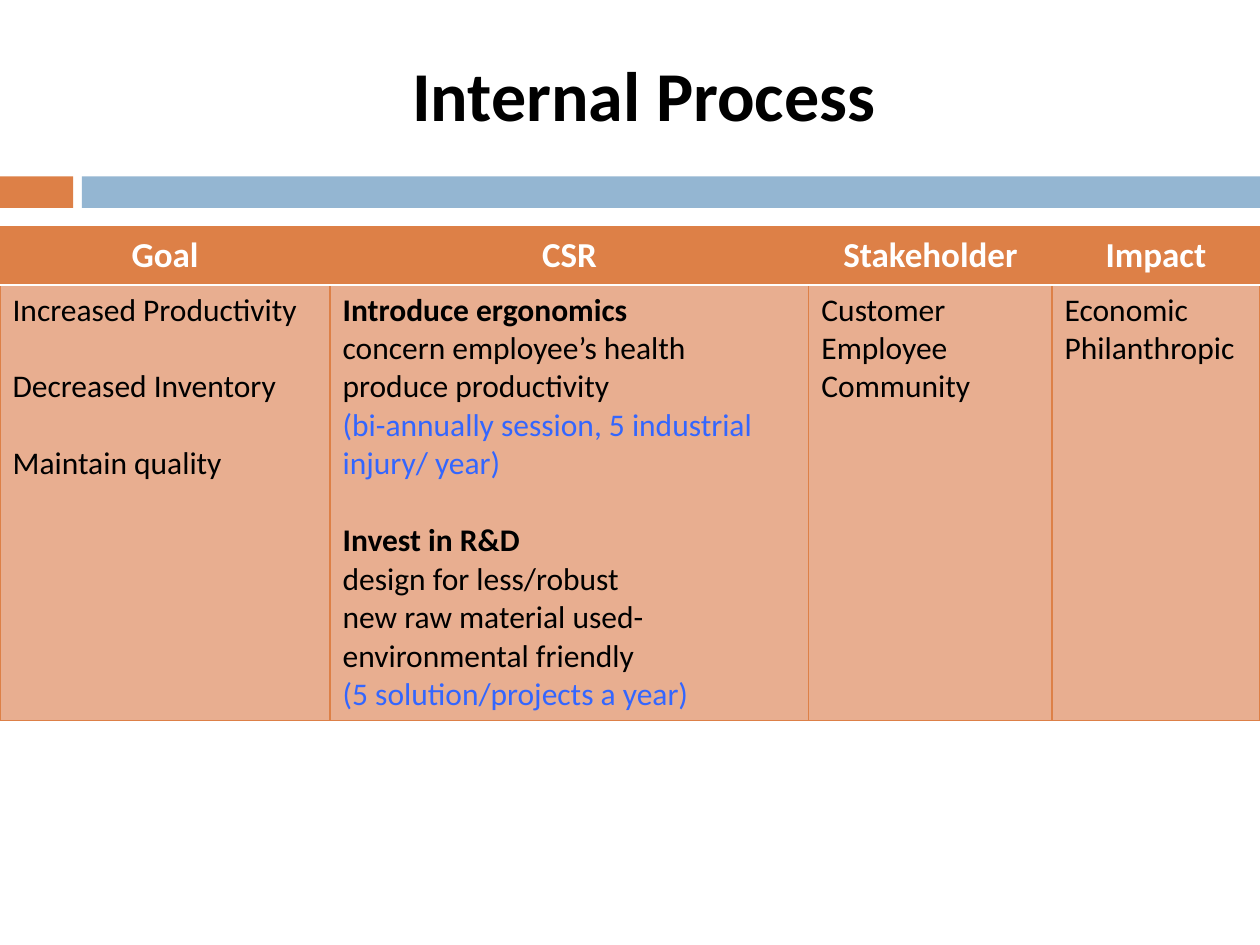
from lxml.etree import SubElement
from pptx import Presentation
from pptx.dml.color import RGBColor
from pptx.enum.shapes import MSO_SHAPE as Shape
from pptx.enum.text import MSO_ANCHOR as Anchor, PP_ALIGN as Align
from pptx.oxml.ns import qn
from pptx.util import Inches, Pt

FONT = "Calibri"
ORANGE, BLUE, PEACH = "DD8047", "94B6D2", "E8AE90"
WHITE, BLACK, NOTE = "FFFFFF", "000000", "3366FF"
LINE = 22  # height of a body line, in points

TITLE = "Internal Process"
BARS = [(0, 0.58, ORANGE), (0.65, 9.35, BLUE)]
HEADS = ["Goal", "CSR", "Stakeholder", "Impact"]
WIDTHS = [2.62, 3.8, 1.93, 1.65]
HEIGHTS = [0.46, 3.45]
# Each column is a list of groups, each group a list of (text, style) lines.
BODY = [
    [[("Increased Productivity", "plain")],
     [("Decreased Inventory", "plain")],
     [("Maintain quality", "plain")]],
    [[("Introduce ergonomics", "bold"),
      ("concern employee’s health", "plain"),
      ("produce productivity", "plain"),
      ("(bi-annually session, 5 industrial injury/ year)", "note")],
     [("Invest in R&D", "bold"),
      ("design for less/robust", "plain"),
      ("new raw material used- environmental friendly", "plain"),
      ("(5 solution/projects a year)", "note")]],
    [[("Customer", "plain"), ("Employee", "plain"), ("Community", "plain")]],
    [[("Economic", "plain"), ("Philanthropic", "plain")]],
]
STYLES = {"plain": (BLACK, False), "bold": (BLACK, True), "note": (NOTE, False)}


def rgb(code):
    return RGBColor.from_string(code)


def style(para, size, color, bold):
    for run in para.runs:
        font = run.font
        font.name, font.size, font.bold = FONT, Pt(size), bold
        font.color.rgb = rgb(color)


def paint(cell, color, edges):
    """Fill a cell and draw its borders, given as (side, color, points)."""
    cell.fill.solid()
    cell.fill.fore_color.rgb = rgb(color)
    props = cell._tc.get_or_add_tcPr()
    for spot, (side, tint, width) in enumerate(edges):
        line = SubElement(props, qn(f"a:ln{side}"), w=str(Pt(width)))
        solid = SubElement(line, qn("a:solidFill"))
        SubElement(solid, qn("a:srgbClr"), val=tint)
        props.insert(spot, line)


def edges(top, low):
    thin = (ORANGE, 0.79)
    return [("L", *thin), ("R", *thin), ("T", *top), ("B", *low)]


def add_title(slide):
    title = slide.shapes.title
    title.left, title.top = Inches(1.71), Inches(0.36)
    title.width, title.height = Inches(6.8), Inches(1.08)
    frame = title.text_frame
    frame.text = TITLE
    frame.vertical_anchor = Anchor.TOP
    para = frame.paragraphs[0]
    para.alignment = Align.CENTER
    style(para, 40, BLACK, True)


def add_bars(slide):
    for left, width, color in BARS:
        bar = slide.shapes.add_shape(Shape.RECTANGLE, Inches(left), Inches(1.4),
                                     Inches(width), Inches(0.25))
        bar.shadow.inherit = False
        bar.fill.solid()
        bar.fill.fore_color.rgb = rgb(color)
        bar.line.fill.background()


def fill_body(cell, groups):
    frame = cell.text_frame
    lines = [(text, kind, i > 0 and j == 0)
             for i, group in enumerate(groups)
             for j, (text, kind) in enumerate(group)]
    for n, (text, kind, gap) in enumerate(lines):
        para = frame.add_paragraph() if n else frame.paragraphs[0]
        para.text = text
        if gap:
            para.space_before = Pt(LINE)
        style(para, 18, *STYLES[kind])


def add_grid(slide):
    table = slide.shapes.add_table(2, len(HEADS), 0, Inches(1.8), Inches(10),
                                   Inches(sum(HEIGHTS))).table
    for row, height in zip(table.rows, HEIGHTS):
        row.height = Inches(height)
    thin, rule = (ORANGE, 0.79), (WHITE, 1.5)
    for col, (head, width, groups) in enumerate(zip(HEADS, WIDTHS, BODY)):
        table.columns[col].width = Inches(width)
        top, low = table.cell(0, col), table.cell(1, col)
        top.text_frame.text = head
        top.vertical_anchor = Anchor.MIDDLE
        para = top.text_frame.paragraphs[0]
        para.alignment = Align.CENTER
        style(para, 20, WHITE, True)
        paint(top, ORANGE, edges(thin, rule))
        fill_body(low, groups)
        paint(low, PEACH, edges(rule, thin))


def main():
    deck = Presentation()
    deck.slide_width, deck.slide_height = Inches(10), Inches(7.5)
    slide = deck.slides.add_slide(deck.slide_layouts[5])
    add_title(slide)
    add_bars(slide)
    add_grid(slide)
    deck.save("out.pptx")


if __name__ == "__main__":
    main()
